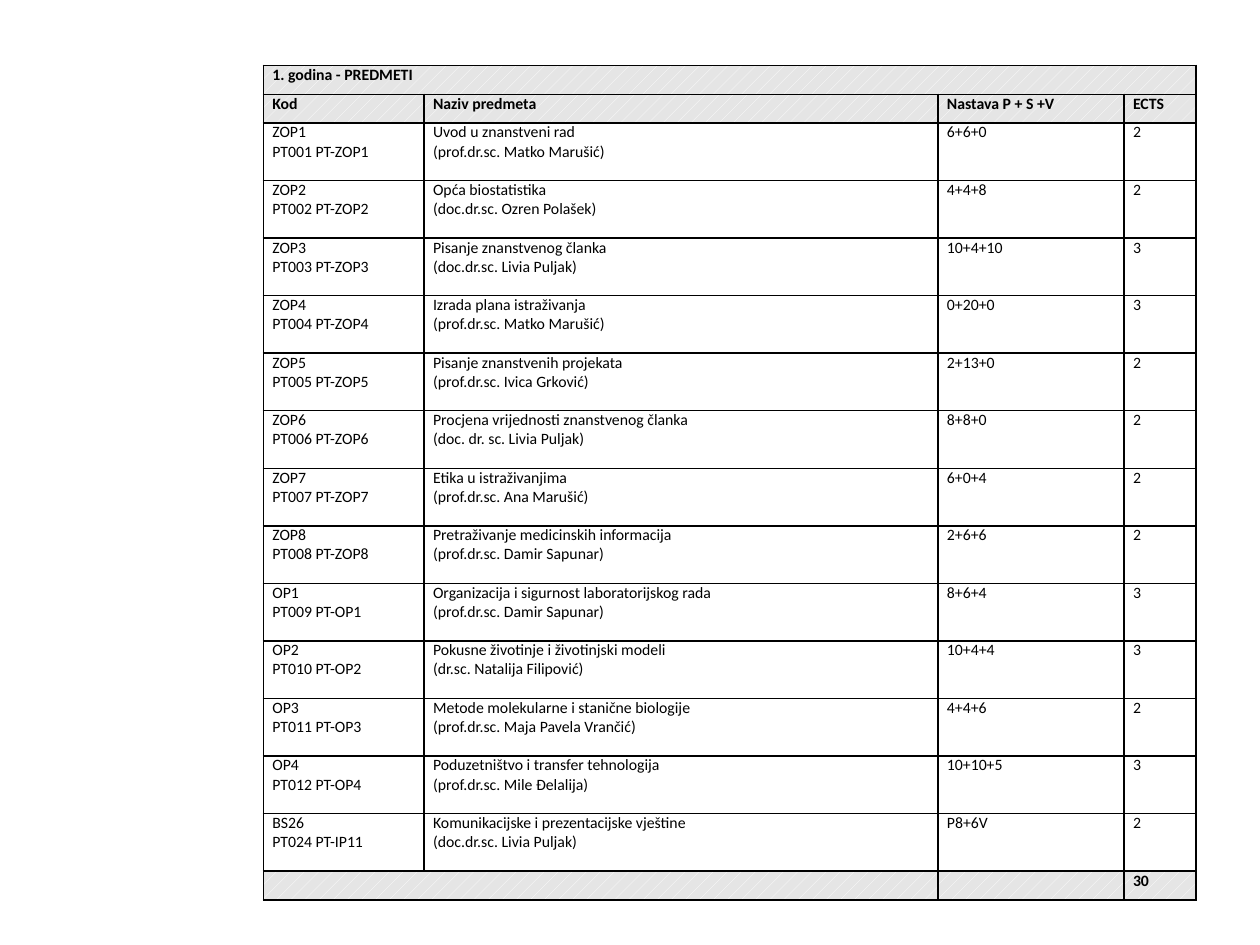
from lxml.etree import SubElement
from pptx import Presentation
from pptx.dml.color import RGBColor
from pptx.enum.dml import MSO_PATTERN
from pptx.enum.text import PP_ALIGN as Align
from pptx.oxml import parse_xml
from pptx.oxml.ns import nsdecls, qn
from pptx.util import Cm, Pt

BLACK = RGBColor(0x00, 0x00, 0x00)
WHITE = RGBColor(0xFF, 0xFF, 0xFF)
GREY = RGBColor(0xE5, 0xE5, 0xE5)
FONT, SIZE = "Calibri", 9

COLUMN_WIDTHS = (3.24, 10.36, 3.75, 1.45)
BAND_HEIGHT, COURSE_HEIGHT = 0.58, 1.16

TITLE = "1. godina - PREDMETI"
HEADINGS = ("Kod", "Naziv predmeta", "Nastava P + S +V", "ECTS")
TOTAL = "30"
# code, second code, course, lecturer, hours, ECTS
COURSES = (
    ("ZOP1", "PT001 PT-ZOP1", "Uvod u znanstveni rad", "(prof.dr.sc. Matko Marušić)", "6+6+0", "2"),
    ("ZOP2", "PT002 PT-ZOP2", "Opća biostatistika", "(doc.dr.sc. Ozren Polašek)", "4+4+8", "2"),
    ("ZOP3", "PT003 PT-ZOP3", "Pisanje znanstvenog članka", "(doc.dr.sc. Livia Puljak)", "10+4+10", "3"),
    ("ZOP4", "PT004 PT-ZOP4", "Izrada plana istraživanja", "(prof.dr.sc. Matko Marušić)", "0+20+0", "3"),
    ("ZOP5", "PT005 PT-ZOP5", "Pisanje znanstvenih projekata", "(prof.dr.sc. Ivica Grković)", "2+13+0", "2"),
    ("ZOP6", "PT006 PT-ZOP6", "Procjena vrijednosti znanstvenog članka", "(doc. dr. sc. Livia Puljak)", "8+8+0", "2"),
    ("ZOP7", "PT007 PT-ZOP7", "Etika u istraživanjima", "(prof.dr.sc. Ana Marušić)", "6+0+4", "2"),
    ("ZOP8", "PT008 PT-ZOP8", "Pretraživanje medicinskih informacija", "(prof.dr.sc. Damir Sapunar)", "2+6+6", "2"),
    ("OP1", "PT009 PT-OP1", "Organizacija i sigurnost laboratorijskog rada", "(prof.dr.sc. Damir Sapunar)", "8+6+4", "3"),
    ("OP2", "PT010 PT-OP2", "Pokusne životinje i životinjski modeli", "(dr.sc. Natalija Filipović)", "10+4+4", "3"),
    ("OP3", "PT011 PT-OP3", "Metode molekularne i stanične biologije", "(prof.dr.sc. Maja Pavela Vrančić)", "4+4+6", "2"),
    ("OP4", "PT012 PT-OP4", "Poduzetništvo i transfer tehnologija", "(prof.dr.sc. Mile Đelalija)", "10+10+5", "3"),
    ("BS26", "PT024 PT-IP11", "Komunikacijske i prezentacijske vještine", "(doc.dr.sc. Livia Puljak)", "P8+6V", "2"),
)


def write_text(frame, text, bold=False, align=Align.LEFT, space=0):
    """Put each line of the text in its own paragraph."""
    for index, line in enumerate(text.split("\n")):
        para = frame.add_paragraph() if index else frame.paragraphs[0]
        para.alignment = align
        para.space_before = para.space_after = Pt(space)
        if not line:
            # An empty cell keeps the small text size, so its row stays low
            SubElement(para._p, qn("a:endParaRPr"), sz=str(SIZE * 100))
            continue
        span = para.add_run()
        span.text = line
        font = span.font
        font.name, font.size, font.bold = FONT, Pt(SIZE), bold
        font.color.rgb = BLACK


def style_cell(cell, shaded):
    """Set margins, fill and a thin black border on all sides."""
    cell.margin_left = cell.margin_right = Cm(0.18)
    cell.margin_top = cell.margin_bottom = 0
    if shaded:
        cell.fill.patterned()
        cell.fill.pattern = MSO_PATTERN.PERCENT_10
        cell.fill.fore_color.rgb = WHITE
        cell.fill.back_color.rgb = GREY
    else:
        cell.fill.background()
    properties = cell._tc.get_or_add_tcPr()
    for position, side in enumerate("LRTB"):
        properties.insert(position, parse_xml(
            f'<a:ln{side} {nsdecls("a")} w="{Pt(1)}"><a:solidFill>'
            f'<a:srgbClr val="{BLACK}"/></a:solidFill></a:ln{side}>'))


def add_course_table(page, left, top):
    """Place the course table with its top left corner at the given point."""
    courses = [(f"{code}\n{number}", f"{name}\n{lecturer}", hours, ects)
               for code, number, name, lecturer, hours, ects in COURSES]
    rows = [(TITLE, "", "", ""), HEADINGS, *courses, ("", "", "", TOTAL)]
    last = len(rows) - 1
    heights = [COURSE_HEIGHT if 1 < row < last else BAND_HEIGHT
               for row in range(len(rows))]
    box = page.shapes.add_table(len(rows), len(COLUMN_WIDTHS), left, top,
                                Cm(sum(COLUMN_WIDTHS)), Cm(sum(heights)))
    table = box.table
    table.first_row = table.horz_banding = False
    for column, width in zip(table.columns, COLUMN_WIDTHS):
        column.width = Cm(width)

    for row, (values, height) in enumerate(zip(rows, heights)):
        table.rows[row].height = Cm(height)
        for column, value in enumerate(values):
            cell = table.cell(row, column)
            style_cell(cell, shaded=row < 2 or row == last)
            flush_left = row == 0 or (1 < row < last and column in (1, 2))
            write_text(cell.text_frame, value, bold=row < 2 or row == last,
                       align=Align.LEFT if flush_left else Align.JUSTIFY,
                       space=6 if row < 2 else 0)

    # Title across the table, empty total label across two columns
    table.cell(0, 0).merge(table.cell(0, 3))
    table.cell(last, 0).merge(table.cell(last, 1))


def main():
    deck = Presentation()
    deck.slide_width, deck.slide_height = Cm(25.4), Cm(19.05)
    page = deck.slides.add_slide(deck.slide_layouts[6])
    add_course_table(page, Cm(5.31), Cm(1.32))
    deck.save("out.pptx")


if __name__ == "__main__":
    main()
